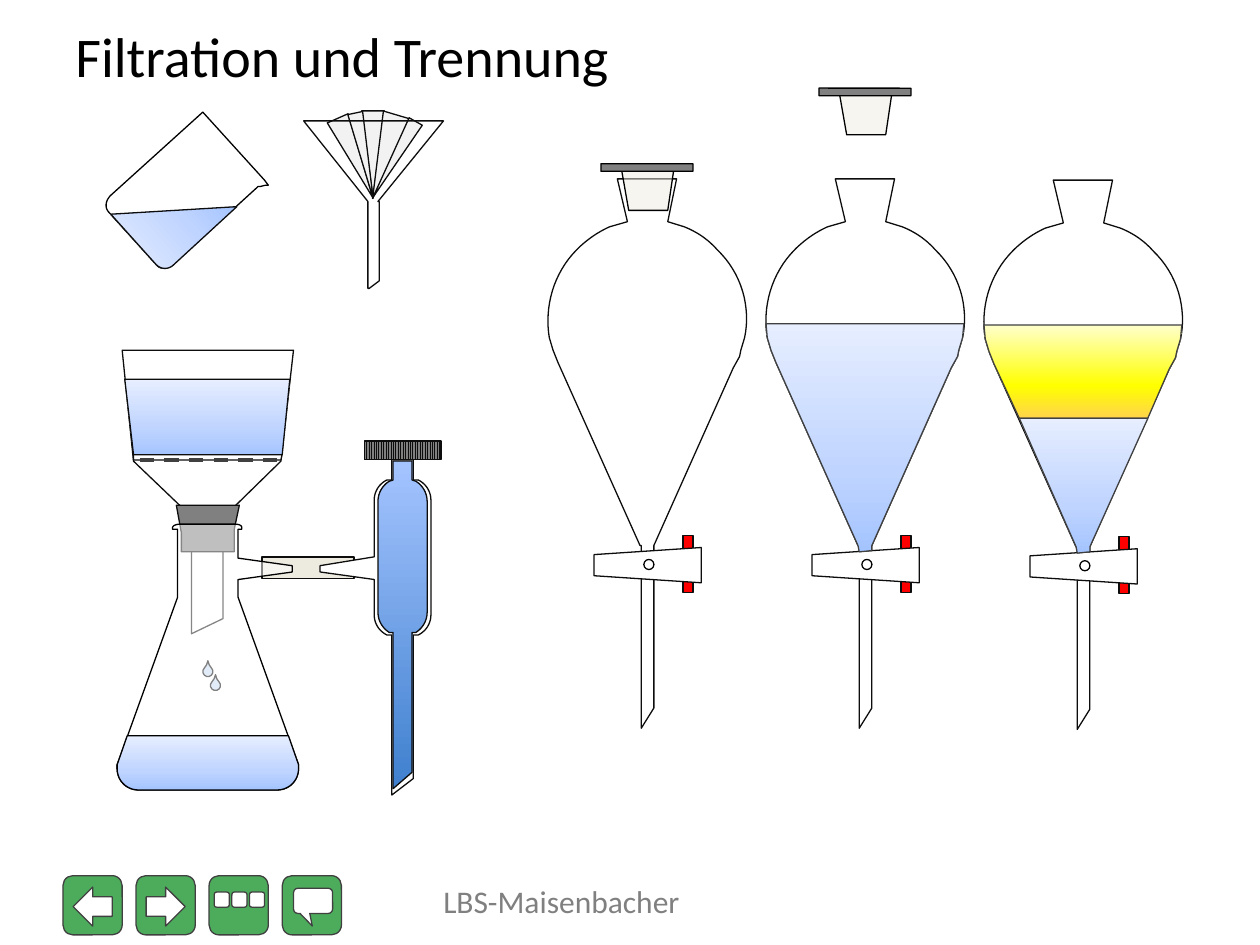
import pptx
import pptx.util
import pptx.dml.color
import pptx.enum.dml
import pptx.enum.shapes
import pptx.enum.text
import pptx.oxml
import pptx.oxml.ns
from dataclasses import dataclass
from typing import NamedTuple, Optional, Union

PX = 9144  # EMU per px, 100 px to the inch
MSO = pptx.enum.shapes.MSO_SHAPE
qn = pptx.oxml.ns.qn


class Solid(NamedTuple):
    color: str
    alpha: int = 100


class Gradient(NamedTuple):
    stops: tuple
    angle: int = 270


class Pattern(NamedTuple):
    front: str
    back: str


Fill = Optional[Union[Solid, Gradient, Pattern]]
WATER = ((0, "A4C4FF"), (35, "BFD4FF"), (100, "E6EEFF"))


@dataclass(frozen=True)
class Theme:
    font: str = "Calibri"
    title_pt: int = 32
    footer_pt: int = 18
    line_pt: float = 0.75
    black: str = "000000"
    ink: str = "0D0D0D"
    dark: str = "404040"
    gray: str = "808080"
    white: Fill = Solid("FFFFFF")
    veil: Fill = Solid("FFFFFF", 50)
    green: Fill = Solid("4DAC5C")
    red: Fill = Solid("FF0000")
    rubber: Fill = Solid("808080")
    paper: Fill = Solid("F2F2F2")
    hose: Fill = Solid("DDD9C3", 50)
    plug: Fill = Solid("EEECE1", 50)
    drop: Fill = Solid("C6D9F1")
    knurl: Fill = Pattern("0D0D0D", "808080")
    water: Fill = Gradient(WATER)
    tilted_water: Fill = Gradient(WATER, 138)
    jet: Fill = Gradient(((0, "3F80CE"), (100, "A4C4FF")))
    oil: Fill = Gradient(((0, "FFD44B"), (35, "FFFF00"), (100, "FFFFCC")))


T = Theme()


class Box(NamedTuple):
    x: int
    y: int
    w: int
    h: int


class Funnel(NamedTuple):
    dx: int
    dy: int
    layers: tuple  # (outline, fill)
    stopper_dy: Optional[int] = None


def rgb(color: str):
    return pptx.dml.color.RGBColor.from_string(color)


def paint(sp, fill: Fill, line: str) -> None:
    sp.shadow.inherit = False
    sp.line.color.rgb = rgb(line)
    sp.line.width = pptx.util.Pt(T.line_pt)
    if isinstance(fill, Solid):
        sp.fill.solid()
        sp.fill.fore_color.rgb = rgb(fill.color)
        if fill.alpha < 100:
            clr = sp._element.spPr.find(qn("a:solidFill"))[0]
            clr.append(pptx.oxml.parse_xml(
                f'<a:alpha {pptx.oxml.ns.nsdecls("a")} val="{fill.alpha * 1000}"/>'))
    elif isinstance(fill, Pattern):
        sp.fill.patterned()
        sp.fill.pattern = pptx.enum.dml.MSO_PATTERN.LIGHT_VERTICAL
        sp.fill.fore_color.rgb = rgb(fill.front)
        sp.fill.back_color.rgb = rgb(fill.back)
    else:
        sp.fill.background()
        if fill:
            stops = "".join(f'<a:gs pos="{pos * 1000}"><a:srgbClr val="{color}"/></a:gs>'
                            for pos, color in fill.stops)
            spPr = sp._element.spPr
            spPr.replace(spPr.find(qn("a:noFill")), pptx.oxml.parse_xml(
                f'<a:gradFill {pptx.oxml.ns.nsdecls("a")} rotWithShape="1"><a:gsLst>{stops}'
                f'</a:gsLst><a:lin ang="{fill.angle * 60000}" scaled="0"/></a:gradFill>'))


def preset(s, kind, box: Box, fill: Fill, line: str = T.ink, rot: float = 0, adj: tuple = ()):
    sp = s.shapes.add_shape(kind, *(v * PX for v in box))
    sp.rotation = rot
    for i, value in enumerate(adj):
        sp.adjustments[i] = value
    paint(sp, fill, line)


def outline(s, path, fill: Fill, line: str = T.ink, dx: int = 0, dy: int = 0) -> None:
    """Draw a closed path: pairs are corners, sextuples are Bézier curves."""
    points = []
    for step in path:
        if len(step) == 2:
            points.append(step)
            continue
        ends = [points[-1], step[:2], step[2:4], step[4:]]
        for t in (i / 16 for i in range(1, 17)):
            weights = ((1 - t) ** 3, 3 * t * (1 - t) ** 2, 3 * t * t * (1 - t), t ** 3)
            points.append(tuple(sum(w * p[k] for w, p in zip(weights, ends)) for k in (0, 1)))
    emu = [((x + dx) * PX, (y + dy) * PX) for x, y in points]
    fb = s.shapes.build_freeform(*emu[0], scale=1.0)
    fb.add_line_segments(emu[1:], close=True)
    paint(fb.convert_to_shape(), fill, line)


def label(s, box: Box, text: str, size: int, color: str, anchor) -> None:
    tf = s.shapes.add_textbox(*(v * PX for v in box)).text_frame
    tf.word_wrap = True
    tf.vertical_anchor = anchor
    tf.text = text
    font = tf.paragraphs[0].runs[0].font
    font.name, font.size, font.color.rgb = T.font, pptx.util.Pt(size), rgb(color)


# Separating funnel outlines, at the place of the leftmost one
RIGHT_WALL = [(591, 268), (588, 278), (587, 283), (582, 292), (519, 433)]
LEFT_WALL = [(508, 433), (443, 288), (441, 283), (439, 278), (436, 268)]
BULB = [(490, 142), (537, 142), (530, 176), (543, 180), (553, 184, 562, 190, 569, 198),
        (589, 217, 596, 244, 591, 268), *RIGHT_WALL[1:], (519, 562), (509, 578), (509, 433),
        *LEFT_WALL, (432, 244, 439, 217, 458, 198), (466, 190, 475, 184, 484, 180), (498, 176)]
SURFACE = [(435, 257), (592, 257)]
BOUNDARY = [(463, 331), (565, 331)]
OUTLET = [(519, 437), (509, 438)]
FULL = SURFACE + RIGHT_WALL + OUTLET + LEFT_WALL
UPPER = SURFACE + RIGHT_WALL[:-1] + BOUNDARY[::-1] + LEFT_WALL[1:]
LOWER = BOUNDARY + RIGHT_WALL[-1:] + OUTLET + LEFT_WALL[:1]

FUNNELS = (
    Funnel(173, 0, ((FULL, T.water),), -60),
    Funnel(346, 1, ((UPPER, T.oil), (LOWER, T.water))),
    Funnel(0, 0, (), 0),
)


def separating_funnel(s, f: Funnel) -> None:
    outline(s, BULB, T.white, dx=f.dx, dy=f.dy)
    preset(s, MSO.RECTANGLE, Box(542 + f.dx, 425 + f.dy, 8, 45), T.red)
    preset(s, MSO.TRAPEZOID, Box(500 + f.dx, 406 + f.dy, 28, 85), T.white, rot=270, adj=(0.2,))
    preset(s, MSO.OVAL, Box(511 + f.dx, 444 + f.dy, 8, 8), T.white, T.black)
    for path, fill in f.layers:
        outline(s, path, fill, T.dark, f.dx, f.dy)
    if f.stopper_dy is not None:
        outline(s, [(493, 133), (535, 133), (530, 167), (499, 167)], T.plug, T.black,
                f.dx, f.stopper_dy)
        preset(s, MSO.ROUNDED_RECTANGLE, Box(477 + f.dx, 130 + f.stopper_dy, 73, 6),
               T.rubber, T.black, adj=(0.03,))


def navigation(s) -> None:
    for x in (50, 108, 166, 224):
        preset(s, MSO.ROUNDED_RECTANGLE, Box(x, 695, 47, 47), T.green, T.dark)
    for x, rot in ((58, 180), (116, 0)):
        preset(s, MSO.RIGHT_ARROW, Box(x, 704, 31, 31), T.white, T.dark, rot)
    for x in (170, 184, 198):
        preset(s, MSO.ROUNDED_RECTANGLE, Box(x, 708, 12, 12), T.white, T.dark)
    preset(s, MSO.ROUNDED_RECTANGULAR_CALLOUT, Box(233, 705, 31, 20), T.white, T.dark,
           adj=(-0.02, 1, 0.17))


def suction_filter(s) -> None:
    # Porcelain funnel with its sieve and liquid
    outline(s, [(97, 278), (233, 278), (223, 366), (177, 411), (177, 491), (152, 503),
                (152, 410), (106, 366)], T.white)
    outline(s, [(106, 360), (224, 360), (223, 365), (106, 365)], T.white)
    sieve = s.shapes.add_connector(pptx.enum.shapes.MSO_CONNECTOR.STRAIGHT,
                                   111 * PX, 365 * PX, 225 * PX, 365 * PX)
    sieve.line.color.rgb = rgb(T.dark)
    sieve.line.width = pptx.util.Pt(2)
    sieve.line.dash_style = pptx.enum.dml.MSO_LINE.DASH
    sieve._element.spPr.append(
        pptx.oxml.parse_xml(f'<a:effectLst {pptx.oxml.ns.nsdecls("a")}/>'))
    outline(s, [(99, 301), (230, 301), (224, 361), (106, 361)], T.water)
    # Rubber bung, hose and drops
    outline(s, [(140, 401), (190, 401), (186, 420), (186, 438), (144, 438), (144, 423)], T.rubber)
    preset(s, MSO.RECTANGLE, Box(208, 442, 73, 17), T.hose)
    for x, y in ((161, 529), (167, 540)):
        preset(s, MSO.TEAR, Box(x, y, 8, 8), T.drop, T.black, 315, (1.52,))
    # Flask with filtrate
    base = [(237, 607), (237, 610), (237, 619, 230, 627, 220, 627), (110, 627),
            (100, 627, 93, 619, 93, 610), (93, 607)]
    outline(s, [(144, 416), (186, 416), (190, 416, 192, 417, 192, 419), (192, 420), (189, 420),
                (189, 443), (232, 449), (232, 454), (189, 460), (189, 474), *base, (141, 474),
                (141, 420), (137, 420), (137, 419), (137, 417, 140, 416, 144, 416)],
            T.veil, T.black)
    outline(s, [(101, 584), (229, 584), *base], T.water, T.black)
    # Water jet pump
    outline(s, [(311, 365), (328, 365), (328, 381), (332, 381), (338, 384, 342, 390, 342, 397),
                (342, 488), (342, 495, 338, 501, 332, 504), (328, 504), (328, 618), (311, 631),
                (311, 504), (307, 504), (301, 501, 297, 495, 297, 488), (297, 460), (254, 454),
                (254, 449), (297, 442), (297, 397), (297, 390, 301, 384, 307, 381), (311, 381)],
            T.white)
    preset(s, MSO.RECTANGLE, Box(289, 350, 61, 15), T.knurl)
    outline(s, [(312, 366), (327, 366), (327, 381), (330, 382), (335, 385, 339, 391, 339, 398),
                (339, 486), (339, 493, 335, 499, 330, 502), (327, 502), (327, 613), (312, 626),
                (312, 502), (309, 502), (304, 499, 300, 493, 300, 486), (300, 398),
                (300, 391, 304, 385, 309, 382), (312, 381)], T.jet)


def beaker(s) -> None:
    outline(s, [(161, 89), (210, 143), (213, 147), (212, 147, 210, 147, 207, 148), (205, 148),
                (137, 210), (133, 214, 127, 214, 124, 210), (86, 168),
                (83, 164, 84, 159, 88, 155)], T.white, T.black)
    outline(s, [(88, 170), (188, 164), (138, 210), (134, 214, 128, 214, 124, 210)],
            T.tilted_water)


def paper_filter(s) -> None:
    folds = ((Box(287, 88, 18, 69), 0), (Box(273, 91, 18, 69), -23.9),
             (Box(283, 89, 12, 69), -11.8), (Box(294, 90, 23, 69), 16.5),
             (Box(307, 92, 12, 69), 29.4))
    for box, tilt in folds:
        preset(s, MSO.ISOSCELES_TRIANGLE, box, T.paper, rot=180 + tilt)
    outline(s, [(241, 96), (352, 96), (300, 160), (301, 160), (301, 223), (293, 229),
                (292, 229), (292, 160)], None)


def main() -> None:
    prs = pptx.Presentation()
    prs.slide_width, prs.slide_height = 1000 * PX, 750 * PX
    s = prs.slides.add_slide(prs.slide_layouts[6])
    anchor = pptx.enum.text.MSO_ANCHOR
    navigation(s)
    label(s, Box(50, 14, 900, 59), "Filtration und Trennung", T.title_pt, T.black, anchor.MIDDLE)
    suction_filter(s)
    beaker(s)
    paper_filter(s)
    for f in FUNNELS:
        separating_funnel(s, f)
    label(s, Box(342, 695, 317, 40), "LBS-Maisenbacher", T.footer_pt, T.gray, anchor.TOP)
    prs.save("out.pptx")


if __name__ == "__main__":
    main()
